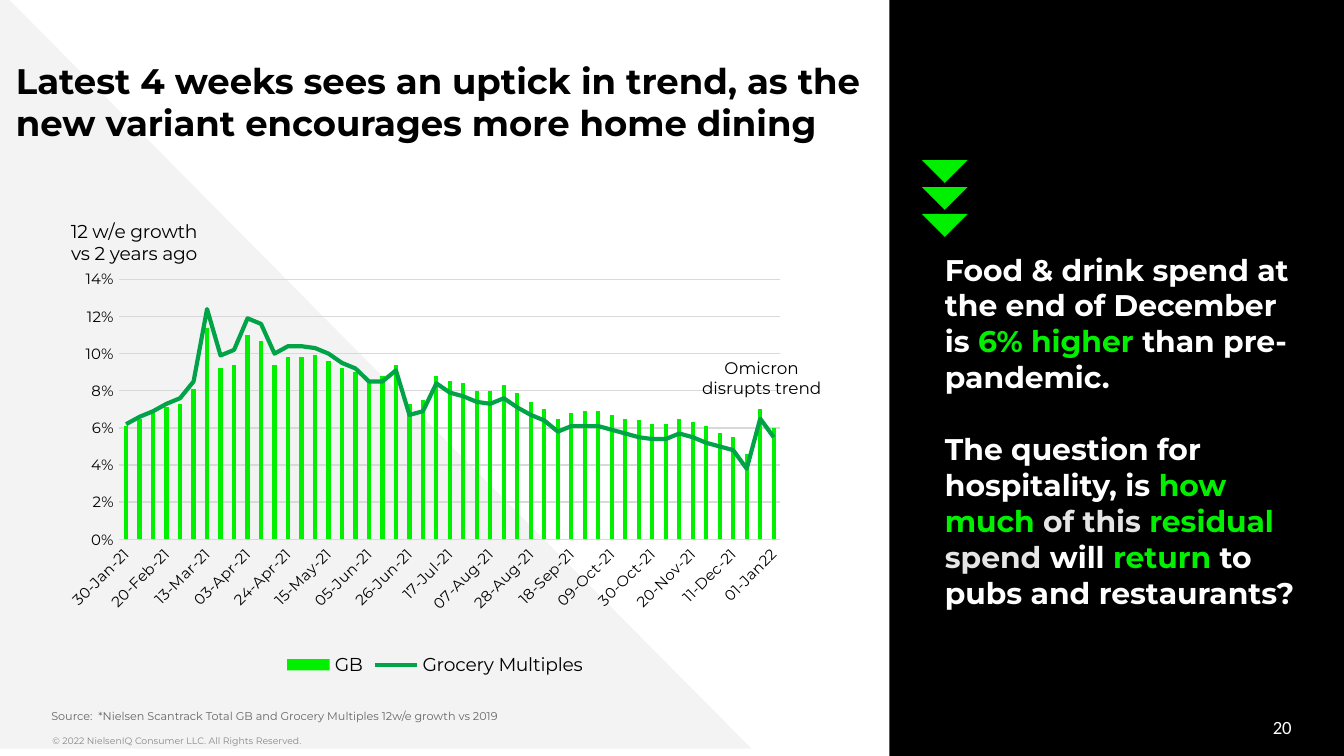
from lxml import etree
from pptx import Presentation
from pptx.chart.data import CategoryChartData
from pptx.dml.color import RGBColor
from pptx.enum.chart import (XL_CHART_TYPE, XL_LEGEND_POSITION, XL_MARKER_STYLE,
                             XL_TICK_MARK)
from pptx.enum.shapes import MSO_SHAPE
from pptx.enum.text import MSO_ANCHOR, PP_ALIGN
from pptx.oxml import parse_xml
from pptx.oxml.ns import nsdecls, qn
from pptx.util import Cm, Pt

BLACK = RGBColor(0x00, 0x00, 0x00)
WHITE = RGBColor(0xFF, 0xFF, 0xFF)
GREEN = RGBColor(0x00, 0xF0, 0x00)
DARK_GREEN = RGBColor(0x00, 0xA3, 0x46)
PALE_GREY = RGBColor(0xF3, 0xF3, 0xF3)
SOFT_WHITE = RGBColor(0xE5, 0xE5, 0xE5)
GRID_GREY = RGBColor(0xD9, 0xD9, 0xD9)
SOURCE_GREY = RGBColor(0x66, 0x66, 0x66)
NOTE_GREY = RGBColor(0x88, 0x88, 0x88)

LEFT, CENTER, RIGHT = PP_ALIGN.LEFT, PP_ALIGN.CENTER, PP_ALIGN.RIGHT
TOP, MIDDLE, BOTTOM = MSO_ANCHOR.TOP, MSO_ANCHOR.MIDDLE, MSO_ANCHOR.BOTTOM
RECTANGLE, RIGHT_TRIANGLE = MSO_SHAPE.RECTANGLE, MSO_SHAPE.RIGHT_TRIANGLE
COLUMNS = XL_CHART_TYPE.COLUMN_CLUSTERED
LEGEND_BOTTOM = XL_LEGEND_POSITION.BOTTOM
NO_MARKER, NO_TICKS = XL_MARKER_STYLE.NONE, XL_TICK_MARK.NONE
FONT = "Montserrat"

WEEKS = (
    "30-Jan-21,06-Feb-21,13-Feb-21,20-Feb-21,27-Feb-21,06-Mar-21,13-Mar-21,"
    "20-Mar-21,27-Mar-21,03-Apr-21,10-Apr-21,17-Apr-21,24-Apr-21,01-May-21,"
    "08-May-21,15-May-21,22-May-21,29-May-21,05-Jun-21,12-Jun-21,19-Jun-21,"
    "26-Jun-21,03-Jul-21,10-Jul-21,17-Jul-21,24-Jul-21,31-Jul-21,07-Aug-21,"
    "14-Aug-21,21-Aug-21,28-Aug-21,04-Sep-21,11-Sep-21,18-Sep-21,25-Sep-21,"
    "02-Oct-21,09-Oct-21,16-Oct-21,23-Oct-21,30-Oct-21,06-Nov-21,13-Nov-21,"
    "20-Nov-21,27-Nov-21, 04-Dec-21,11-Dec-21,18-Dec-21,25-Dec-21, 01-Jan22"
).split(",")
GROWTH = {
    "GB": (
        0.061, 0.065, 0.068, 0.071, 0.073, 0.081, 0.114, 0.092, 0.094, 0.11,
        0.107, 0.094, 0.098, 0.098, 0.099, 0.096, 0.092, 0.09, 0.086, 0.088,
        0.094, 0.073, 0.075, 0.088, 0.085, 0.084, 0.08, 0.08, 0.083, 0.079,
        0.074, 0.07, 0.065, 0.068, 0.069, 0.069, 0.067, 0.065, 0.064, 0.062,
        0.062, 0.065, 0.063, 0.061, 0.057, 0.055, 0.046, 0.07, 0.06),
    "Grocery Multiples": (
        0.062, 0.066, 0.069, 0.073, 0.076, 0.085, 0.124, 0.099, 0.102, 0.119,
        0.116, 0.1, 0.104, 0.104, 0.103, 0.1, 0.095, 0.092, 0.085, 0.085,
        0.091, 0.067, 0.069, 0.084, 0.079, 0.077, 0.074, 0.073, 0.076, 0.071,
        0.067, 0.064, 0.058, 0.061, 0.061, 0.061, 0.059, 0.057, 0.055, 0.054,
        0.054, 0.057, 0.055, 0.052, 0.05, 0.048, 0.038, 0.065, 0.055),
}
MESSAGE = [
    [("Food & drink spend at the end of December is ", WHITE),
     ("6% higher ", GREEN), ("than pre-pandemic.", WHITE)],
    [("The question for hospitality, is ", WHITE), ("how much", GREEN),
     (" of this ", SOFT_WHITE), ("residual", GREEN), (" spend ", SOFT_WHITE),
     ("will ", WHITE), ("return", GREEN), (" to pubs and restaurants?", WHITE)],
]


def style_font(font, size, color, bold=False, name=FONT):
    font.size, font.bold, font.name = Pt(size), bold, name
    font.color.rgb = color


def place(shape, box):
    shape.left, shape.top, shape.width, shape.height = map(Cm, box)


def write(shape, paragraphs, size, bold=False, name=FONT, align=LEFT,
          anchor=TOP, inset=0.13, gap=0, wrap=True):
    """Fill a shape with paragraphs, each a list of (text, colour) runs."""
    frame = shape.text_frame
    frame.word_wrap, frame.vertical_anchor = wrap, anchor
    frame.margin_left = frame.margin_right = 0
    frame.margin_top = frame.margin_bottom = Cm(inset)
    for index, runs in enumerate(paragraphs):
        para = frame.add_paragraph() if index else frame.paragraphs[0]
        para.alignment, para.line_spacing = align, 1.0
        para.space_before = Pt(gap if index else 0)
        for text, color in runs:
            span = para.add_run()
            span.text = text
            style_font(span.font, size, color, bold, name)


def add_text(page, box, paragraphs, size, **options):
    write(page.shapes.add_textbox(*map(Cm, box)), paragraphs, size, **options)


def add_plain_shape(page, kind, box, color):
    shape = page.shapes.add_shape(kind, *map(Cm, box))
    shape.shadow.inherit = False
    shape.fill.solid()
    shape.fill.fore_color.rgb = color
    shape.line.fill.background()
    return shape


def remove_children(parent, tag):
    for child in parent.findall(qn(tag)):
        parent.remove(child)


def manual_layout(x, y, width=None, height=None):
    """Return a c:layout element; sizes apply to the inner plot area."""
    layout = etree.Element(qn("c:layout"))
    manual = etree.SubElement(layout, qn("c:manualLayout"))
    values = [("xMode", "edge"), ("yMode", "edge"), ("x", x), ("y", y)]
    if width is not None:
        values = [("layoutTarget", "inner")] + values + [("w", width), ("h", height)]
    for tag, value in values:
        etree.SubElement(manual, qn("c:" + tag)).set("val", str(value))
    return layout


def turn_last_series_into_line(chart):
    bars = chart.plots[0]._element
    series = bars.findall(qn("c:ser"))[-1]
    remove_children(series, "c:invertIfNegative")
    lines = parse_xml(f'<c:lineChart {nsdecls("c")}><c:grouping val="standard"/>'
                      '<c:varyColors val="0"/><c:marker val="1"/></c:lineChart>')
    lines.insert(2, series)
    for axis in bars.findall(qn("c:axId")):
        etree.SubElement(lines, qn("c:axId")).set("val", axis.get("val"))
    bars.addnext(lines)
    line = chart.plots[1].series[0]
    line.smooth = False
    line.marker.style = NO_MARKER
    line.format.line.color.rgb = DARK_GREEN
    line.format.line.width = Pt(2.25)


def style_axes(chart):
    weeks, growth = chart.category_axis, chart.value_axis
    for axis in (weeks, growth):
        axis.major_tick_mark = axis.minor_tick_mark = NO_TICKS
        style_font(axis.tick_labels.font, 8, BLACK)
    weeks.format.line.color.rgb = GRID_GREY
    weeks._element.find(qn("c:txPr")).find(qn("a:bodyPr")).set("rot", "-2700000")
    skip = etree.Element(qn("c:tickLblSkip"))
    skip.set("val", "3")
    weeks._element.find(qn("c:noMultiLvlLbl")).addprevious(skip)

    growth.minimum_scale, growth.maximum_scale, growth.major_unit = 0, 0.14, 0.02
    growth.tick_labels.number_format = "0%"
    growth.tick_labels.number_format_is_linked = False
    growth.format.line.fill.background()
    growth.major_gridlines.format.line.color.rgb = GRID_GREY
    growth.major_gridlines.format.line.width = Pt(0.75)
    frame = growth.axis_title.text_frame
    frame._txBody.find(qn("a:bodyPr")).set("rot", "0")
    for index, text in enumerate(("12 w/e growth", "vs 2 years ago")):
        para = frame.add_paragraph() if index else frame.paragraphs[0]
        span = para.add_run()
        span.text = text
        style_font(span.font, 10, BLACK)
    title = growth.axis_title._element
    remove_children(title, "c:layout")
    title.find(qn("c:tx")).addnext(manual_layout(0.01, 0.01))


def add_growth_chart(page, box):
    data = CategoryChartData(number_format="0.0%")
    data.categories = WEEKS
    for name, values in GROWTH.items():
        data.add_series(name, values)
    chart = page.shapes.add_chart(COLUMNS, *map(Cm, box), data).chart
    chart.has_title = False
    style_font(chart.font, 10, BLACK)
    bars = chart.plots[0]
    bars.gap_width, bars.vary_by_categories = 219, False
    fill = bars.series[0].format.fill
    fill.solid()
    fill.fore_color.rgb = GREEN
    turn_last_series_into_line(chart)
    style_axes(chart)
    chart.has_legend = True
    chart.legend.position, chart.legend.include_in_layout = LEGEND_BOTTOM, False
    style_font(chart.legend.font, 10, BLACK)
    plot = chart._chartSpace.chart.plotArea
    remove_children(plot, "c:layout")
    plot.insert(0, manual_layout(0.08, 0.15, 0.88, 0.55))


def add_message_panel(page, box):
    left, top, width, height = box
    add_plain_shape(page, RECTANGLE, box, BLACK)
    add_text(page, (left + 1.05, top + 4.62, 6.76, 7.09), MESSAGE, 16,
             bold=True, gap=19.5)
    for row in range(3):
        arrow = add_plain_shape(page, RIGHT_TRIANGLE, (
            left + 0.74, top + 2.72 + 0.51 * row, 0.61, 0.61), GREEN)
        arrow.rotation = 315
    add_text(page, (left + 1.88, top + height - 0.93, 5.72, 0.76),
             [[("20", WHITE)]], 10, name="Calibri", align=RIGHT, anchor=MIDDLE)


def add_trend_region(page, box):
    left, top, width, height = box
    add_plain_shape(page, RIGHT_TRIANGLE, (left, top - 0.18, 14.2, 14.33), PALE_GREY)
    title, source = page.placeholders[0], page.placeholders[1]
    place(title, (left + 0.3, top + 0.86, width - 0.3, 1.85))
    write(title, [[("Latest 4 weeks sees an uptick in trend, as the new variant "
                    "encourages more home dining", BLACK)]], 19, bold=True, inset=0.25)
    place(source, (left + 0.97, top + 13.41, 15.42, 0.51))
    write(source, [[("Source:  *Nielsen Scantrack Total GB and Grocery Multiples "
                     "12w/e growth vs 2019", SOURCE_GREY)]], 6, anchor=BOTTOM, inset=0.25)
    # Title and source stand in front of the grey triangle.
    for holder in (title, source):
        page.shapes._spTree.append(holder._element)
    add_growth_chart(page, (left + 1.12, top + 3.94, 14.2, 8.94))
    add_text(page, (left + 13, top + 6.63, 2.79, 1.02),
             [[("Omicron", BLACK)], [("disrupts trend", BLACK)]], 9,
             align=CENTER, wrap=False)
    add_text(page, (left + 0.99, top + height - 0.5, 14.07, 0.5),
             [[("© 2022 NielsenIQ Consumer LLC. All Rights Reserved.", NOTE_GREY)]], 5)


deck = Presentation()
deck.slide_width, deck.slide_height = Cm(25.4), Cm(14.29)
page = deck.slides.add_slide(deck.slide_layouts[0])
add_trend_region(page, (0, 0, 16.81, 14.29))
add_message_panel(page, (16.81, 0, 8.59, 14.29))
deck.save("out.pptx")
